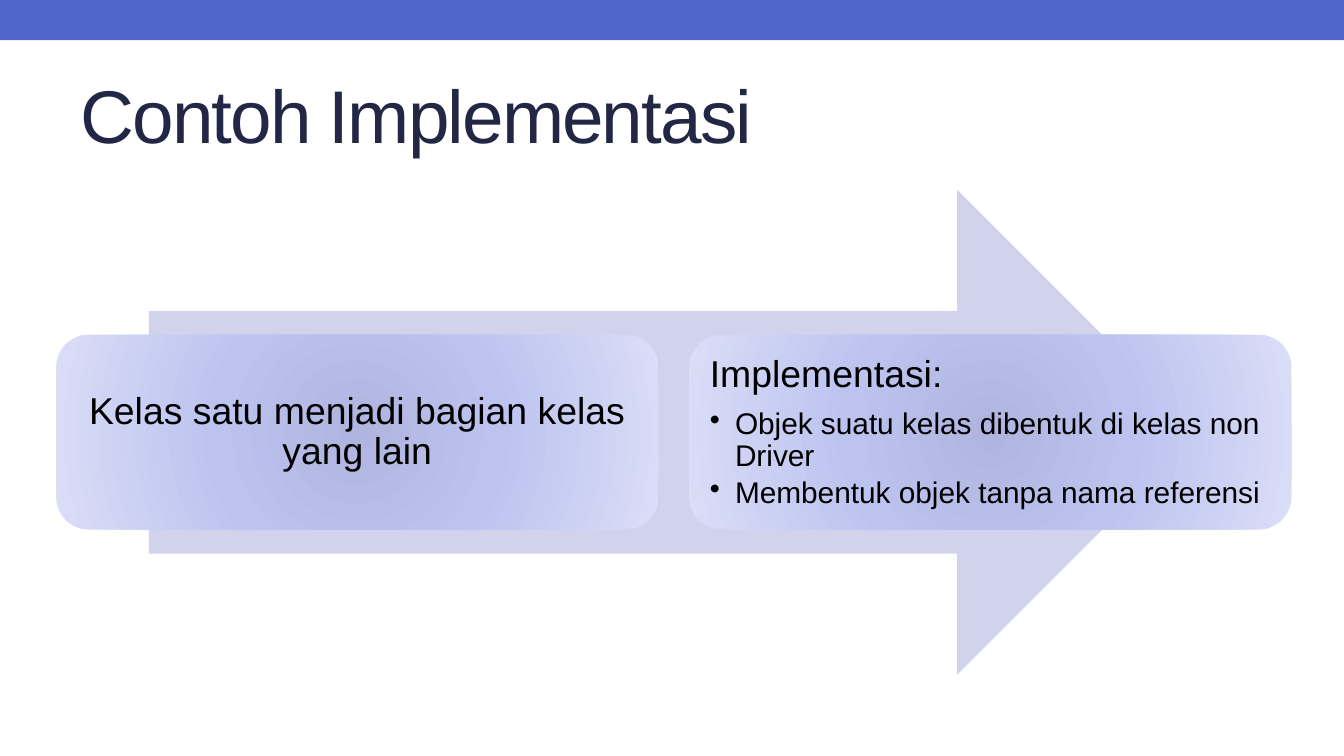
from dataclasses import dataclass

from lxml.etree import SubElement
from pptx import Presentation
from pptx.dml.color import RGBColor
from pptx.enum.shapes import MSO_SHAPE
from pptx.enum.text import MSO_ANCHOR, MSO_AUTO_SIZE, PP_ALIGN
from pptx.oxml import parse_xml
from pptx.oxml.ns import nsdecls, qn
from pptx.util import Pt


@dataclass(frozen=True)
class Theme:
    font: str = "Arial"
    band: str = "4E67C8"
    arrow: str = "D0D3EB"
    title: str = "212745"
    body: str = "000000"
    card_stops: tuple = ((0, "AFB5DE"), (45, "BCC3EF"), (100, "DADEF7"))
    title_size: int = 40
    heading_size: int = 20
    bullet_size: int = 16


THEME = Theme()

CARD_LEFT, CARD_TOP = 30.1, 179.4
CARD_WIDTH, CARD_HEIGHT, CARD_GAP = 322.7, 104.2, 16.4
BULLET_INDENT = 13.5


def add_block(slide, kind, left, top, width, height, color=None):
    block = slide.shapes.add_shape(kind, Pt(left), Pt(top), Pt(width), Pt(height))
    block.shadow.inherit = False
    block.line.fill.background()
    if color:
        block.fill.solid()
        block.fill.fore_color.rgb = RGBColor.from_string(color)
    return block


def fill_radially(block, stops):
    """Give the block a circular gradient that starts at its centre."""
    stop_xml = "".join(
        f'<a:gs pos="{percent * 1000}"><a:srgbClr val="{color}"/></a:gs>'
        for percent, color in stops
    )
    gradient = parse_xml(
        f'<a:gradFill {nsdecls("a")} rotWithShape="1"><a:gsLst>{stop_xml}</a:gsLst>'
        '<a:path path="circle"><a:fillToRect l="100000" t="100000" '
        'r="100000" b="100000"/></a:path></a:gradFill>'
    )
    block.fill.background()
    properties = block.element.spPr
    properties.replace(properties.find(qn("a:noFill")), gradient)


def add_run(paragraph, text, size, color):
    run = paragraph.add_run()
    run.text = text
    run.font.name = THEME.font
    run.font.size = Pt(size)
    run.font.color.rgb = RGBColor.from_string(color)
    return run


def make_bullet(paragraph):
    paragraph.level = 1
    properties = paragraph._p.get_or_add_pPr()
    properties.set("marL", str(Pt(BULLET_INDENT)))
    properties.set("indent", str(-Pt(BULLET_INDENT)))
    SubElement(properties, qn("a:buChar"), char="•")


def add_card(slide, column, heading, bullets=()):
    left = CARD_LEFT + column * (CARD_WIDTH + CARD_GAP)
    card = add_block(slide, MSO_SHAPE.ROUNDED_RECTANGLE,
                     left, CARD_TOP, CARD_WIDTH, CARD_HEIGHT)
    fill_radially(card, THEME.card_stops)

    frame = card.text_frame
    frame.word_wrap = True
    frame.margin_left = frame.margin_right = Pt(6)
    frame.margin_top = frame.margin_bottom = Pt(6)
    frame.vertical_anchor = MSO_ANCHOR.TOP if bullets else MSO_ANCHOR.MIDDLE

    heading_line = frame.paragraphs[0]
    heading_line.alignment = PP_ALIGN.LEFT if bullets else PP_ALIGN.CENTER
    heading_line.line_spacing = 0.9
    heading_line.space_after = Pt(7)
    add_run(heading_line, heading, THEME.heading_size, THEME.body)

    for bullet in bullets:
        bullet_line = frame.add_paragraph()
        bullet_line.alignment = PP_ALIGN.LEFT
        bullet_line.line_spacing = 0.9
        bullet_line.space_after = Pt(2.4)
        make_bullet(bullet_line)
        add_run(bullet_line, bullet, THEME.bullet_size, THEME.body)


def set_title(slide, text):
    title = slide.shapes.title
    title.left, title.top = Pt(36), Pt(31.7)
    title.width, title.height = Pt(648), Pt(58.3)
    frame = title.text_frame
    frame.auto_size = MSO_AUTO_SIZE.NONE
    frame.vertical_anchor = MSO_ANCHOR.MIDDLE
    heading = frame.paragraphs[0]
    heading.alignment = PP_ALIGN.LEFT
    run = add_run(heading, text, THEME.title_size, THEME.title)
    run.font._element.set("spc", "-100")


def main():
    deck = Presentation()
    deck.slide_width, deck.slide_height = Pt(720), Pt(405)
    slide = deck.slides.add_slide(deck.slide_layouts[5])

    add_block(slide, MSO_SHAPE.RECTANGLE, 0, 0, 720, 21.6, THEME.band)
    set_title(slide, "Contoh Implementasi")
    add_block(slide, MSO_SHAPE.RIGHT_ARROW, 79.7, 101.6, 563, 260, THEME.arrow)
    add_card(slide, 0, "Kelas satu menjadi bagian kelas yang lain")
    add_card(slide, 1, "Implementasi:", (
        "Objek suatu kelas dibentuk di kelas non Driver",
        "Membentuk objek tanpa nama referensi",
    ))

    deck.save("out.pptx")


if __name__ == "__main__":
    main()
